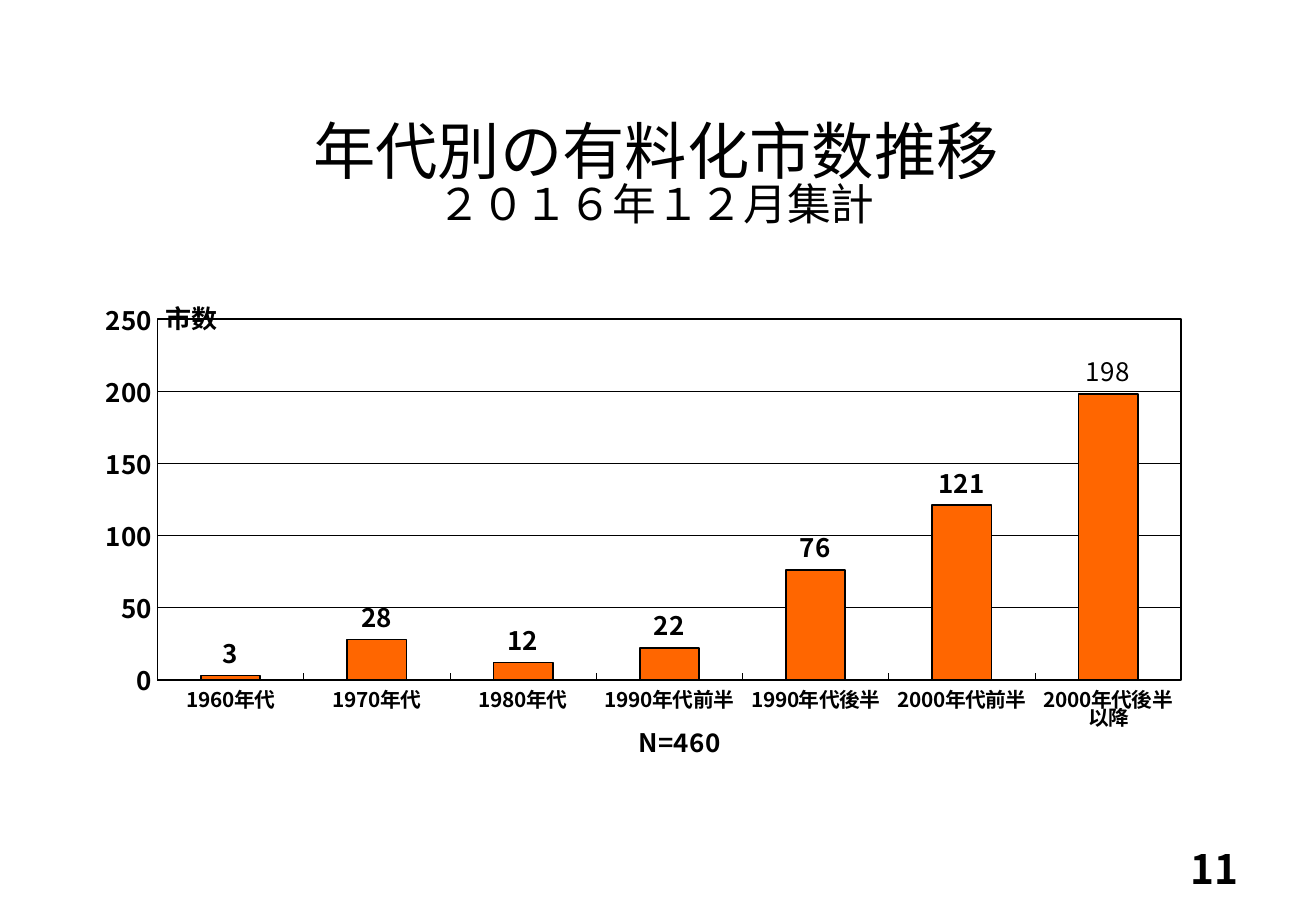
from lxml import etree
from pptx import Presentation
from pptx.chart.data import CategoryChartData
from pptx.dml.color import RGBColor
from pptx.enum.chart import XL_CHART_TYPE as ChartType, XL_LABEL_POSITION as LabelPos, XL_TICK_MARK as Tick
from pptx.enum.text import MSO_ANCHOR as Anchor, PP_ALIGN as Align
from pptx.oxml import parse_xml
from pptx.oxml.ns import nsdecls, qn
from pptx.util import Inches, Pt

CITIES_BY_DECADE = {
    "1960年代": 3,
    "1970年代": 28,
    "1980年代": 12,
    "1990年代前半": 22,
    "1990年代後半": 76,
    "2000年代前半": 121,
    "2000年代後半": 198,
}


def color(value):
    return RGBColor.from_string(value)


class FeeTrendSlide:
    """Holds the style and the current slide, and adds each kind of element."""

    ink = "000000"
    bar_fill = "FF6600"
    body_font = "Noto Sans CJK JP"
    title_font = "Calibri"

    def __init__(self, deck):
        self.slide = deck.slides.add_slide(deck.slide_layouts[6])

    def style_font(self, font, size, bold=True, name=None):
        font.name = name or self.body_font
        font.size = Pt(size)
        font.bold = bold
        font.color.rgb = color(self.ink)

    def style_line(self, line, width):
        line.color.rgb = color(self.ink)
        line.width = Pt(width)

    def add_text(self, box, words, sizes, align, bold=False, name=None, spacing=1.0):
        frame = self.slide.shapes.add_textbox(*map(Inches, box)).text_frame
        frame.word_wrap = True
        frame.vertical_anchor = Anchor.MIDDLE
        paragraph = frame.paragraphs[0]
        paragraph.text = words
        paragraph.alignment = align
        paragraph.line_spacing = spacing
        for run, size in zip(paragraph.runs, sizes):
            self.style_font(run.font, size, bold, name)

    def manual_layout(self, x, y, extent=None):
        values = {"xMode": "edge", "yMode": "edge", "x": x, "y": y}
        if extent:
            values = {"layoutTarget": "inner", **values, "w": extent[0], "h": extent[1]}
        layout = parse_xml(f"<c:layout {nsdecls('c')}><c:manualLayout/></c:layout>")
        for tag, value in values.items():
            etree.SubElement(layout[0], qn(f"c:{tag}")).set("val", str(value))
        return layout

    def place(self, parent, layout, index):
        for old in parent.findall(qn("c:layout")):
            parent.remove(old)
        parent.insert(index, layout)

    def add_chart_title(self, title, words, size, x, y):
        frame = title.text_frame
        frame.text = words
        self.style_font(frame.paragraphs[0].runs[0].font, size)
        frame.paragraphs[0].alignment = Align.CENTER
        title.element.find(".//" + qn("a:bodyPr")).set("rot", "0")
        self.place(title.element, self.manual_layout(x, y), 1)

    def style_axis(self, axis, size):
        self.style_font(axis.tick_labels.font, size)
        self.style_line(axis.format.line, 0.25)
        axis.major_tick_mark = Tick.INSIDE
        axis.minor_tick_mark = Tick.NONE

    def add_column_chart(self, box, cities):
        data = CategoryChartData()
        data.categories = list(cities)
        data.add_series("Series 1", list(cities.values()))
        chart = self.slide.shapes.add_chart(
            ChartType.COLUMN_CLUSTERED, *map(Inches, box), data).chart
        self.style_font(chart.font, 14.4)
        chart.has_legend = False

        decades, counts = chart.category_axis, chart.value_axis
        self.style_axis(decades, 12.3)
        self.style_axis(counts, 15.4)
        counts.minimum_scale, counts.maximum_scale, counts.major_unit = 0, 250, 50
        self.style_line(counts.major_gridlines.format.line, 0.25)
        self.add_chart_title(decades.axis_title, "N=460", 15.4, 0.49, 0.91)
        self.add_chart_title(counts.axis_title, "市数", 15.4, 0.06, 0.01)
        self.add_chart_title(chart.chart_title, "以降", 12.3, 0.9, 0.87)

        plot = chart.plots[0]
        plot.gap_width = 147
        plot.vary_by_categories = False
        bars = plot.series[0]
        bars.format.fill.solid()
        bars.format.fill.fore_color.rgb = color(self.bar_fill)
        self.style_line(bars.format.line, 1.03)
        labels = bars.data_labels
        labels.show_value = True
        labels.position = LabelPos.OUTSIDE_END
        self.style_font(labels.font, 15.4)
        latest = bars.points[len(cities) - 1].data_label
        self.style_font(latest.font, 15.4, bold=False)
        latest.position = LabelPos.OUTSIDE_END

        area = chart.element.find(".//" + qn("c:plotArea"))
        self.place(area, self.manual_layout(0.057, 0.069, (0.931, 0.766)), 0)
        area.append(parse_xml(
            f"<c:spPr {nsdecls('c', 'a')}><a:noFill/><a:ln w=\"{Pt(1)}\"><a:solidFill>"
            f"<a:srgbClr val=\"{self.ink}\"/></a:solidFill></a:ln></c:spPr>"))


def main():
    deck = Presentation()
    deck.slide_width, deck.slide_height = Inches(10.83), Inches(7.5)
    page = FeeTrendSlide(deck)
    page.add_text((1.15, 0.89, 8.5, 1.15), "年代別の有料化市数推移\v２０１６年１２月集計",
                  (36.9, 25.9), Align.CENTER, name=page.title_font, spacing=0.8)
    page.add_column_chart((0.78, 2.36, 9.05, 3.96), CITIES_BY_DECADE)
    page.add_text((7.76, 6.95, 2.53, 0.4), "11", (24,), Align.RIGHT, bold=True)
    deck.save("out.pptx")


if __name__ == "__main__":
    main()
